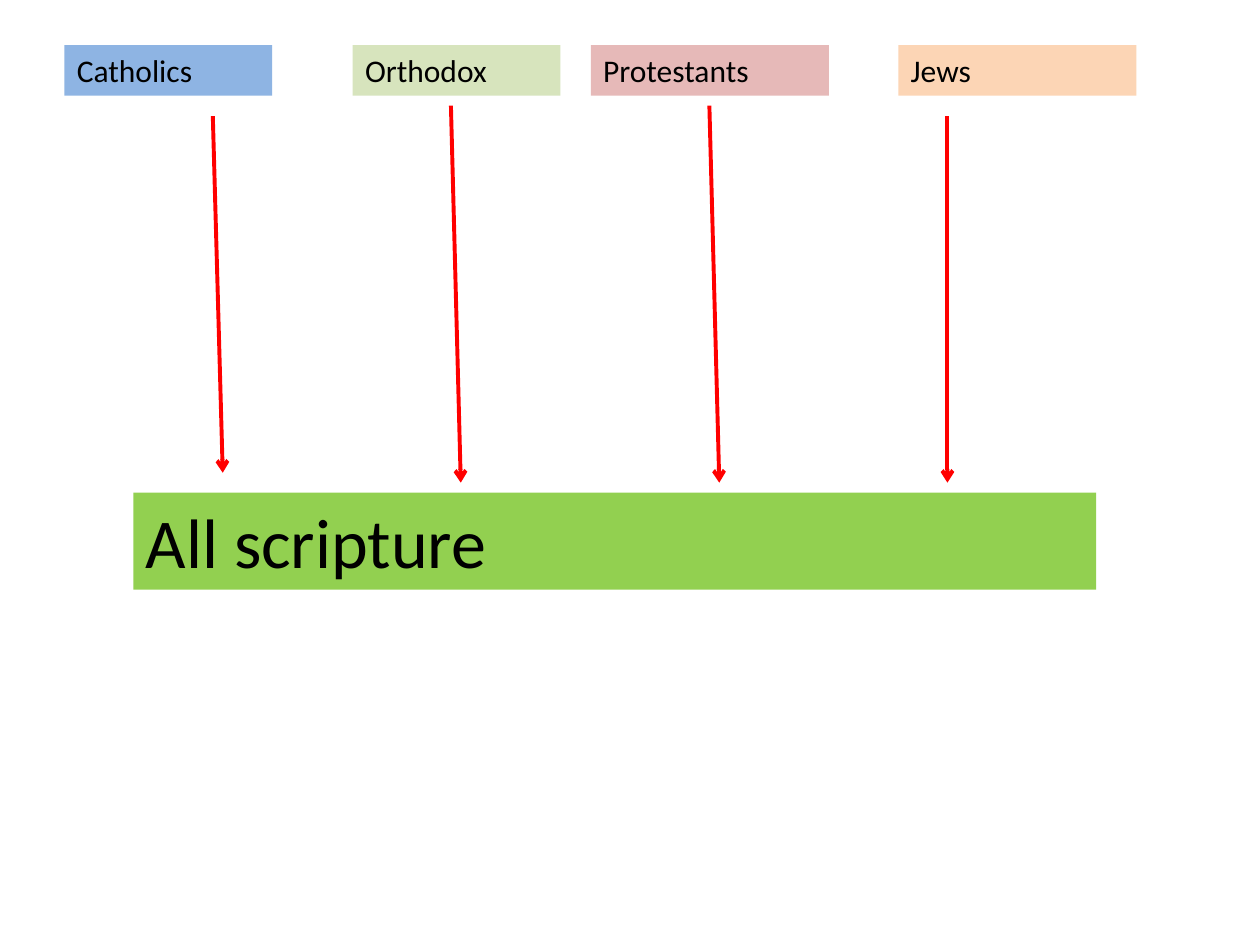
from dataclasses import dataclass

import pptx
import pptx.dml.color
import pptx.enum.shapes
import pptx.enum.text
import pptx.oxml
import pptx.oxml.ns
import pptx.util

Cm = pptx.util.Cm


@dataclass(frozen=True)
class Theme:
    font: str = "Calibri"
    text: str = "000000"
    arrow: str = "FF0000"
    scripture: str = "92D050"
    catholics: str = "8EB4E3"
    orthodox: str = "D7E4BD"
    protestants: str = "E6B9B8"
    jews: str = "FCD5B5"
    group_size: int = 18
    scripture_size: int = 40
    arrow_width: float = 2.25


THEME = Theme()
GROUP_TOP, GROUP_HEIGHT = 0.91, 1.02

# name, fill, left, width, then the arrow within the group's box:
# start x, start y, end y, sideways drift
GROUPS = [
    ("Catholics", THEME.catholics, 1.3, 4.19, 2.99, 1.43, 8.62, 0.2),
    ("Orthodox", THEME.orthodox, 7.11, 4.19, 1.98, 1.22, 8.82, 0.2),
    ("Protestants", THEME.protestants, 11.91, 4.8, 2.39, 1.22, 8.82, 0.2),
    ("Jews", THEME.jews, 18.11, 4.8, 0.99, 1.43, 8.82, 0),
]


def rgb(value):
    return pptx.dml.color.RGBColor.from_string(value)


def add_label(slide, box, wording, fill, size):
    label = slide.shapes.add_textbox(*(Cm(length) for length in box))
    label.fill.solid()
    label.fill.fore_color.rgb = rgb(fill)
    frame = label.text_frame
    frame.word_wrap = True
    frame.auto_size = pptx.enum.text.MSO_AUTO_SIZE.SHAPE_TO_FIT_TEXT
    run = frame.paragraphs[0].add_run()
    run.text = wording
    run.font.name = THEME.font
    run.font.size = pptx.util.Pt(size)
    run.font.color.rgb = rgb(THEME.text)


def add_arrow(slide, start, end):
    arrow = slide.shapes.add_connector(
        pptx.enum.shapes.MSO_CONNECTOR.STRAIGHT,
        *(Cm(length) for length in (*start, *end)))
    arrow.line.color.rgb = rgb(THEME.arrow)
    arrow.line.width = pptx.util.Pt(THEME.arrow_width)
    head = pptx.oxml.parse_xml(
        f'<a:tailEnd {pptx.oxml.ns.nsdecls("a")} type="arrow"/>')
    arrow.line._get_or_add_ln().append(head)
    no_shadow = pptx.oxml.parse_xml(
        f'<a:effectLst {pptx.oxml.ns.nsdecls("a")}/>')
    arrow._element.spPr.append(no_shadow)


def add_group(slide, box, name, fill, start_x, start_y, end_y, drift):
    """Place a group's label and the arrow leading down from it."""
    left, top = box[:2]
    add_label(slide, box, name, fill, THEME.group_size)
    add_arrow(slide, (left + start_x, top + start_y),
              (left + start_x + drift, top + end_y))


def main():
    deck = pptx.Presentation()
    deck.slide_width, deck.slide_height = Cm(25.4), Cm(19.05)
    slide = deck.slides.add_slide(deck.slide_layouts[6])
    for name, fill, left, width, *arrow in GROUPS:
        box = (left, GROUP_TOP, width, GROUP_HEIGHT)
        add_group(slide, box, name, fill, *arrow)
    add_label(slide, (2.69, 9.93, 19.41, 1.96), "All scripture",
              THEME.scripture, THEME.scripture_size)
    deck.save("out.pptx")


if __name__ == "__main__":
    main()
